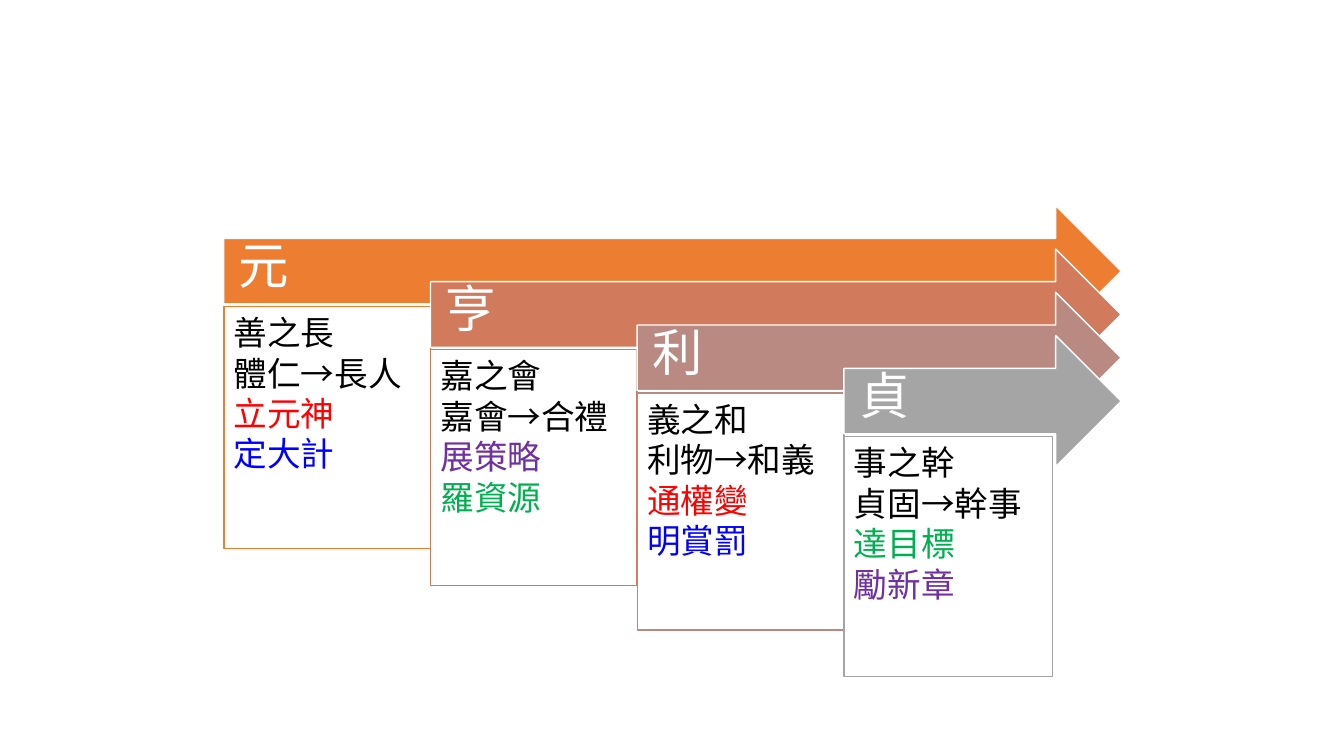
from pptx import Presentation
from pptx.dml.color import RGBColor
from pptx.enum.shapes import MSO_SHAPE
from pptx.enum.text import MSO_ANCHOR, PP_ALIGN
from pptx.oxml.ns import qn
from pptx.util import Inches, Pt

ARROW, CARD = MSO_SHAPE.RIGHT_ARROW, MSO_SHAPE.RECTANGLE
MIDDLE, TOP = MSO_ANCHOR.MIDDLE, MSO_ANCHOR.TOP
LEFT = PP_ALIGN.LEFT
FONT = "Noto Sans CJK SC"
COLORS = {
    "white": "FFFFFF", "black": "000000", "red": "FF0000", "blue": "0000FF",
    "purple": "7030A0", "green": "00B050", "orange": "ED7D31",
    "copper": "D17B5C", "rose": "B98A82", "grey": "A5A5A5",
}
SIDES = ("margin_left", "margin_top", "margin_right", "margin_bottom")
ARROW_TEXT = {"size": 36, "after": 0, "anchor": MIDDLE, "margins": (0.15, 0.15, 0.28, 0.21)}
CARD_TEXT = {"size": 24, "after": 3, "anchor": TOP, "margins": (0.1, 0.1, 0.1, 0.1)}

PAGE_WIDTH, PAGE_HEIGHT = 13.33, 7.5
DIAGRAM = (2.22, 2.04, 8.9, 4.67)
COLUMN, ROW = 2.05, 0.43
ARROW_HEIGHT, CARD_DROP = 1.3, 1.0
STAGES = [
    ("元", "orange", 2.05, 2.4,
     [("善之長", "black"), ("體仁→長人", "black"), ("立元神", "red"), ("定大計", "blue")]),
    ("亨", "copper", 2.05, 2.34,
     [("嘉之會", "black"), ("嘉會→合禮", "black"), ("展策略", "purple"), ("羅資源", "green")]),
    ("利", "rose", 2.05, 2.35,
     [("義之和", "black"), ("利物→和義", "black"), ("通權變", "red"), ("明賞罰", "blue")]),
    ("貞", "grey", 2.07, 2.38,
     [("事之幹", "black"), ("貞固→幹事", "black"), ("達目標", "green"), ("勵新章", "purple")]),
]


def color(name):
    """Return the named colour."""
    return RGBColor.from_string(COLORS[name])


def write_lines(frame, lines, style):
    """Write coloured lines into a text frame."""
    frame.word_wrap = True
    frame.vertical_anchor = style["anchor"]
    for side, margin in zip(SIDES, style["margins"]):
        setattr(frame, side, Inches(margin))
    for index, (text, tint) in enumerate(lines):
        para = frame.add_paragraph() if index else frame.paragraphs[0]
        layout = {"alignment": LEFT, "line_spacing": 0.9, "space_after": Pt(style["after"])}
        for name, value in layout.items():
            setattr(para, name, value)
        span = para.add_run()
        span.text = text
        for name, value in {"size": Pt(style["size"]), "name": FONT}.items():
            setattr(span.font, name, value)
        span.font.color.rgb = color(tint)
        east_asian = span.font._element.makeelement(qn("a:ea"), {"typeface": FONT})
        span.font._element.append(east_asian)


def add_block(page, kind, box, fill, line, lines, style):
    """Draw one filled, outlined shape with its text."""
    block = page.shapes.add_shape(kind, *map(Inches, box))
    block.shadow.inherit = False
    block.fill.solid()
    block.fill.fore_color.rgb = color(fill)
    block.line.color.rgb = color(line)
    block.line.width = Pt(1)
    write_lines(block.text_frame, lines, style)


def add_stage(page, box, stage):
    """Place a stage's arrow across its box and its card below."""
    left, top, width, _ = box
    title, tint, card_width, card_height, lines = stage
    add_block(page, ARROW, (left, top, width, ARROW_HEIGHT), tint, "white",
              [(title, "white")], ARROW_TEXT)
    add_block(page, CARD, (left, top + CARD_DROP, card_width, card_height), "white", tint,
              lines, CARD_TEXT)


def add_cascade(page, box):
    """Step the stages right and down, all ending at the box's right edge."""
    left, top, width, height = box
    for step, stage in enumerate(STAGES):
        across, down = step * COLUMN, step * ROW
        add_stage(page, (left + across, top + down, width - across, height - down), stage)


def main():
    """Build and save the deck."""
    deck = Presentation()
    deck.slide_width, deck.slide_height = Inches(PAGE_WIDTH), Inches(PAGE_HEIGHT)
    page = deck.slides.add_slide(deck.slide_layouts[6])
    add_cascade(page, DIAGRAM)
    deck.save("out.pptx")


if __name__ == "__main__":
    main()
